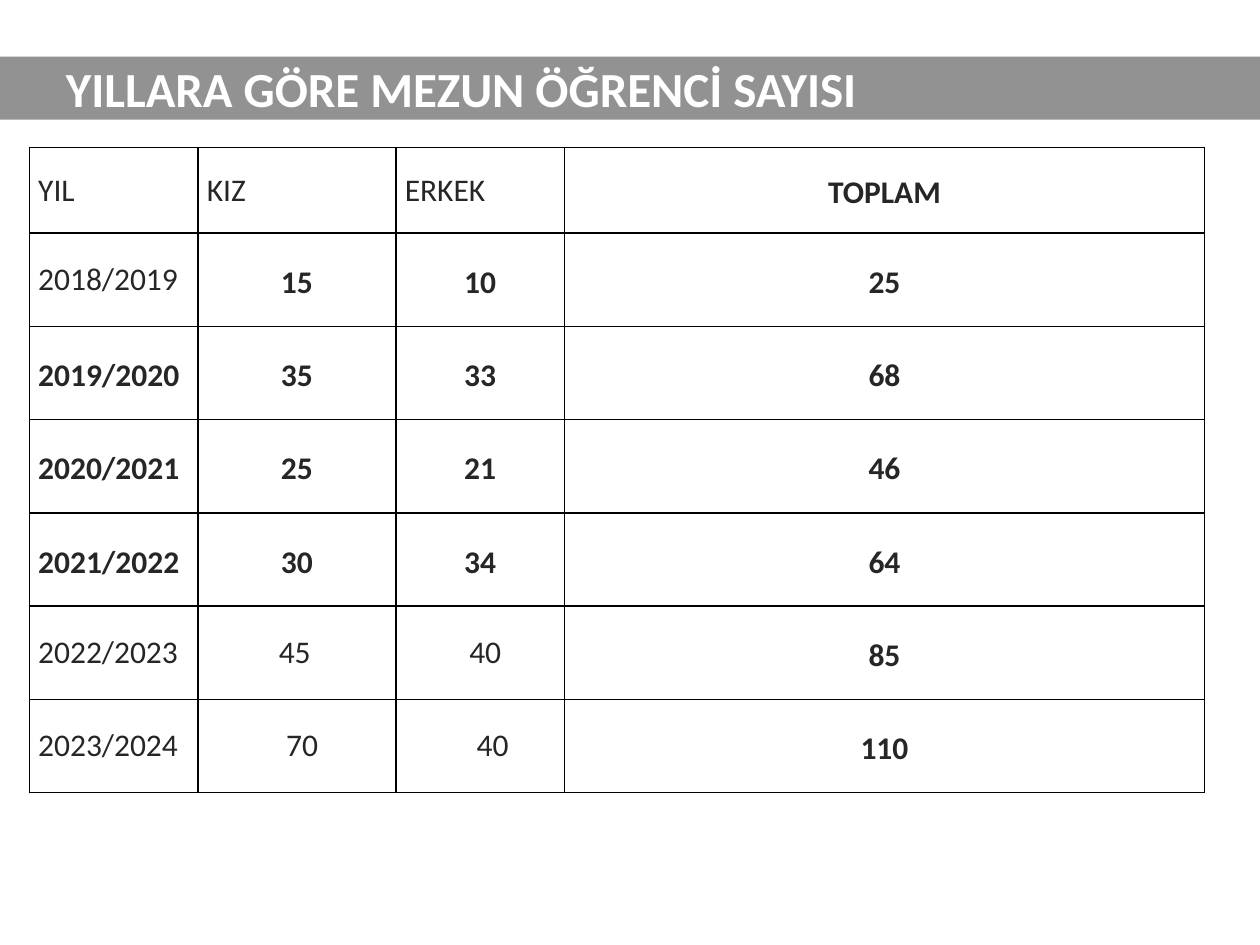
"""Build the slide with the number of graduates per school year."""
from dataclasses import dataclass

from pptx import Presentation
from pptx import util as u
from pptx.dml.color import RGBColor
from pptx.enum import text
from pptx.oxml import parse_xml
from pptx.oxml.ns import nsdecls


@dataclass(frozen=True)
class Theme:
    font: str = "Calibri"
    title_size: int = 28
    cell_size: int = 18
    band: str = "929292"
    white: str = "FFFFFF"
    ink: str = "262626"
    border: str = "000000"


THEME = Theme()
TITLE = "YILLARA GÖRE MEZUN ÖĞRENCİ SAYISI"
HEADER = ("YIL", "KIZ", "ERKEK", "TOPLAM")
GRADUATES = (
    ("2018/2019", 15, 10),
    ("2019/2020", 35, 33),
    ("2020/2021", 25, 21),
    ("2021/2022", 30, 34),
    ("2022/2023", 45, 40),
    ("2023/2024", 70, 40),
)
COLUMN_WIDTHS = (3.4, 3.99, 3.4, 12.9)
HEADER_HEIGHT, ROW_HEIGHT = 1.73, 1.88
CELL_MARGIN = 0.18
PLAIN_CELLS = {(0, 0), (0, 1), (0, 2), (1, 0)} | {
    (row, column) for row in (5, 6) for column in range(3)
}
INDENTS = {(5, 1): 1.45, (5, 2): 1.3, (6, 1): 1.6, (6, 2): 1.45}


def fill_solid(target, color):
    target.fill.solid()
    target.fill.fore_color.rgb = RGBColor.from_string(color)


def style_font(paragraph, size, color, bold):
    font = paragraph.font
    font.name = THEME.font
    font.size = u.Pt(size)
    font.bold = bold
    font.color.rgb = RGBColor.from_string(color)


def add_title(slide):
    title = slide.shapes.title
    title.left, title.top = u.Cm(0), u.Cm(1.14)
    title.width, title.height = u.Cm(25.4), u.Cm(1.27)
    fill_solid(title, THEME.band)
    frame = title.text_frame
    frame.text = TITLE
    frame.auto_size = text.MSO_AUTO_SIZE.NONE
    frame.vertical_anchor = text.MSO_ANCHOR.MIDDLE
    frame.margin_left = u.Cm(1.33)
    paragraph = frame.paragraphs[0]
    paragraph.alignment = text.PP_ALIGN.LEFT
    style_font(paragraph, THEME.title_size, THEME.white, True)


def add_borders(cell):
    properties = cell._tc.get_or_add_tcPr()
    for index, side in enumerate(("lnL", "lnR", "lnT", "lnB")):
        properties.insert(index, parse_xml(
            f'<a:{side} {nsdecls("a")} w="{u.Pt(1)}"><a:solidFill>'
            f'<a:srgbClr val="{THEME.border}"/></a:solidFill></a:{side}>'
        ))


def format_cell(cell, value, position):
    cell.text = str(value)
    cell.vertical_anchor = text.MSO_ANCHOR.MIDDLE
    cell.margin_left = u.Cm(CELL_MARGIN + INDENTS.get(position, 0))
    cell.margin_right = u.Cm(CELL_MARGIN)
    cell.margin_top = cell.margin_bottom = 0
    fill_solid(cell, THEME.white)
    add_borders(cell)
    paragraph = cell.text_frame.paragraphs[0]
    bold = position not in PLAIN_CELLS
    if bold:
        paragraph.line_spacing = 1.15
        if position[1] > 0:
            paragraph.alignment = text.PP_ALIGN.CENTER
    style_font(paragraph, THEME.cell_size, THEME.ink, bold)


def add_graduate_table(slide):
    rows = [HEADER] + [(year, girls, boys, girls + boys) for year, girls, boys in GRADUATES]
    heights = [HEADER_HEIGHT] + [ROW_HEIGHT] * len(GRADUATES)
    table = slide.shapes.add_table(
        len(rows), len(HEADER), u.Cm(0.59), u.Cm(2.97),
        u.Cm(sum(COLUMN_WIDTHS)), u.Cm(sum(heights)),
    ).table
    table.first_row = table.horz_banding = False
    for column, width in zip(table.columns, COLUMN_WIDTHS):
        column.width = u.Cm(width)
    for row_index, (values, height) in enumerate(zip(rows, heights)):
        table.rows[row_index].height = u.Cm(height)
        for column_index, value in enumerate(values):
            position = (row_index, column_index)
            format_cell(table.cell(*position), value, position)


def main():
    presentation = Presentation()
    presentation.slide_width, presentation.slide_height = u.Cm(25.4), u.Cm(19.05)
    slide = presentation.slides.add_slide(presentation.slide_layouts[5])
    add_title(slide)
    add_graduate_table(slide)
    presentation.save("out.pptx")


if __name__ == "__main__":
    main()
